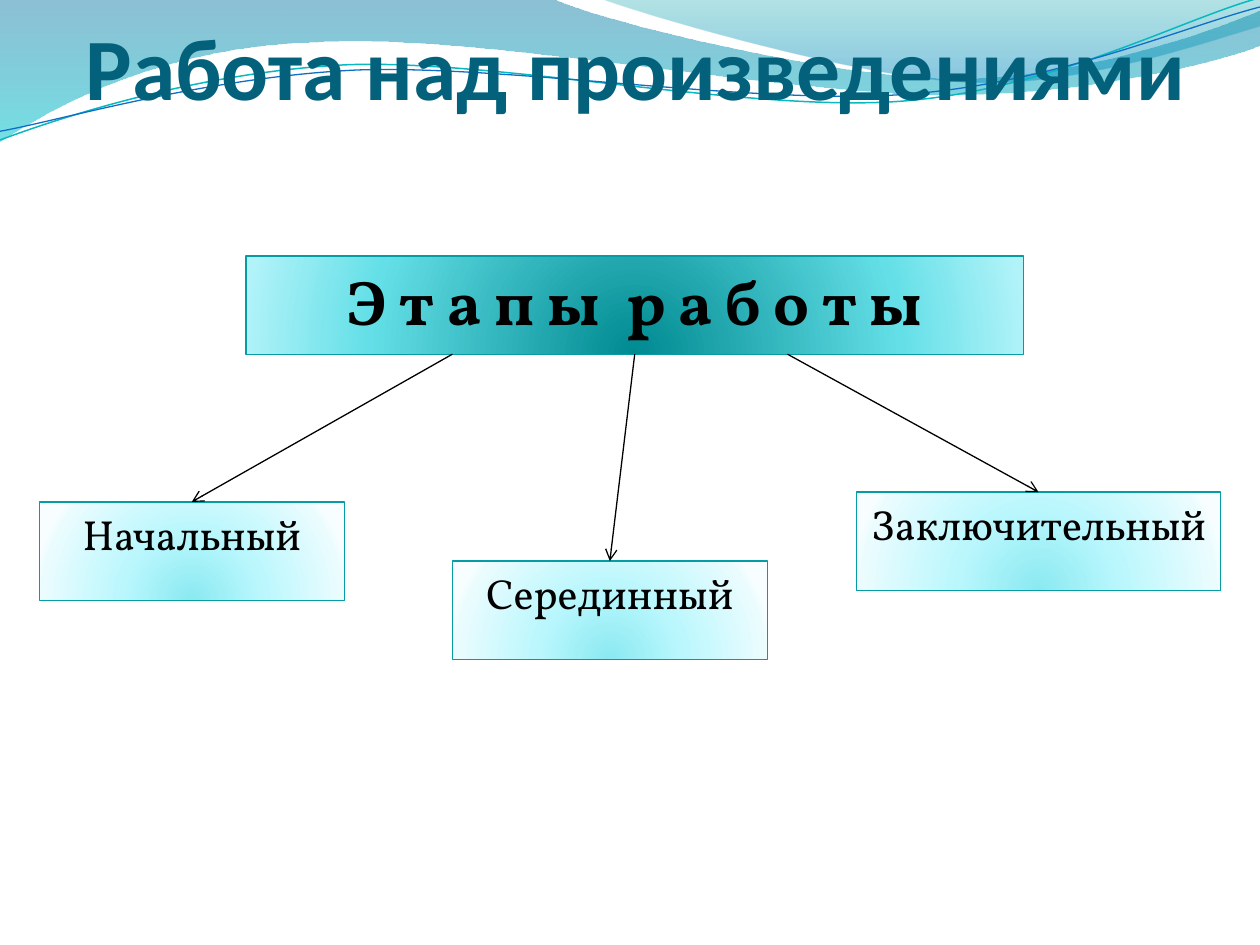
from lxml.etree import SubElement
from pptx import Presentation
from pptx.dml.color import RGBColor
from pptx.enum.shapes import MSO_CONNECTOR, MSO_SHAPE
from pptx.enum.text import MSO_ANCHOR, MSO_AUTO_SIZE, PP_ALIGN
from pptx.oxml import parse_xml
from pptx.oxml.ns import nsdecls, qn
from pptx.util import Pt

# Content: lengths in points, gradient stops as (position %, colour, opacity %)
TITLE = "Работа над произведениями"
HEADING = ("Э т а п ы", "р а б о т ы")
HEADING_BOX = (140.6, 146.2, 444.2)
BOX_HEIGHT = 56.2
STAGES = [  # text, (left, top, width), x where its arrow leaves the heading
    ("Начальный", (22.5, 286.8, 174.2), 258.5),
    ("Серединный", (258.5, 320.6, 180), 362.7),
    ("Заключительный", (489.4, 281.2, 208.1), 450),
]
HEADING_STOPS = [(0, "008A91", 100), (68, "64DFE7", 100), (100, "B1F3F9", 100)]
STAGE_STOPS = [(0, "8BE9F1", 100), (43, "B9F7FD", 100),
               (93, "EAFCFE", 100), (100, "F8FEFF", 100)]
RADIAL = ('<a:path path="circle"><a:fillToRect l="50000" t="130000" '
          'r="50000" b="-30000"/></a:path>')
DOWNWARD = '<a:lin ang="5400000" scaled="0"/>'

# Waves: a start point, then line ends (x, y) or Bezier curves (x1, y1, x2, y2, x, y)
FILLED_WAVES = [
    ([(0, 0), (317, 0), (343, 12, 478, 45, 546, 45), (614, 45, 690, 19, 720, 6),
      (720, 26), (708, 32, 626, 55, 537, 54), (448, 54, 275, 20, 185, 24),
      (93, 26, 33, 60, 0, 81)],
     [(0, "0074A1", 45), (100, "00C6CF", 55)]),
    ([(345, 0), (366, 8, 491, 45, 554, 47), (616, 50, 692, 23, 720, 15), (720, 0)],
     [(0, "00A1A9", 30), (80, "008BBF", 45)]),
]
LINE_WAVES = [
    ([(0, 80), (35, 67, 114, 41, 199, 37), (284, 34, 427, 64, 513, 58),
      (600, 52, 675, 11, 719, -1)], "0AB8BF", 0.85),
    ([(0, 75), (34, 69, 118, 44, 204, 40), (290, 37, 430, 60, 516, 54),
      (602, 48, 677, 15, 720, 4)], "0F6FC6", 0.75),
]


def color(hex_code):
    return RGBColor.from_string(hex_code)


def fill_gradient(shape, stops, direction):
    shape.fill.solid()
    solid = shape.element.spPr.find(qn("a:solidFill"))
    marks = "".join(
        f'<a:gs pos="{pos * 1000}"><a:srgbClr val="{tint}">'
        f'<a:alpha val="{opacity * 1000}"/></a:srgbClr></a:gs>'
        for pos, tint, opacity in stops)
    gradient = parse_xml(f'<a:gradFill {nsdecls("a")} rotWithShape="1">'
                         f'<a:gsLst>{marks}</a:gsLst>{direction}</a:gradFill>')
    solid.getparent().replace(solid, gradient)


def set_line(shape, tint, width):
    shape.line.color.rgb = color(tint)
    shape.line.width = Pt(width)


def add_wave(outline, closed):
    points = [(Pt(x), Pt(y)) for segment in outline
              for x, y in zip(segment[::2], segment[1::2])]
    builder = slide.shapes.build_freeform(*points[0])
    builder.add_line_segments(points[1:], close=closed)
    wave = builder.convert_to_shape()
    wave.shadow.inherit = False
    # Merge the three points of each curve into one Bezier segment
    steps = iter(list(wave.element.iter(qn("a:lnTo"))))
    for segment in outline[1:]:
        first = next(steps)
        if len(segment) == 6:
            first.tag = qn("a:cubicBezTo")
            for _ in range(2):
                step = next(steps)
                first.append(step[0])
                step.getparent().remove(step)
    return wave


def place(shape, left, top, width, height):
    shape.left, shape.top = Pt(left), Pt(top)
    shape.width, shape.height = Pt(width), Pt(height)


def format_text(shape, size, font_name, tint, bold, anchor):
    frame = shape.text_frame
    frame.word_wrap = True
    frame.auto_size = MSO_AUTO_SIZE.NONE
    frame.vertical_anchor = anchor
    paragraph = frame.paragraphs[0]
    paragraph.alignment = PP_ALIGN.CENTER
    paragraph.space_before = Pt(0)
    font = paragraph.font
    font.size, font.name, font.bold = Pt(size), font_name, bold
    font.color.rgb = color(tint)


def style_box(shape, box, stops, size, bold):
    place(shape, *box, BOX_HEIGHT)
    fill_gradient(shape, stops, RADIAL)
    set_line(shape, "069CA3", 0.75)
    format_text(shape, size, "Vollkorn", "000000", bold, MSO_ANCHOR.TOP)


def add_rectangle():
    rectangle = slide.shapes.add_shape(MSO_SHAPE.RECTANGLE, 0, 0, 0, 0)
    rectangle.shadow.inherit = False
    return rectangle


prs = Presentation()
prs.slide_width, prs.slide_height = Pt(720), Pt(540)
slide = prs.slides.add_slide(prs.slide_layouts[1])
title, body = slide.placeholders

# Waves, sent behind the placeholders
waves = []
for outline, stops in FILLED_WAVES:
    wave = add_wave(outline, closed=True)
    fill_gradient(wave, stops, DOWNWARD)
    wave.line.fill.background()
    waves.append(wave)
for outline, tint, width in LINE_WAVES:
    wave = add_wave(outline, closed=False)
    wave.fill.background()
    set_line(wave, tint, width)
    waves.append(wave)
for wave in waves:
    title.element.addprevious(wave.element)

# Title
title.text = TITLE
place(title, 28.3, 0, 670.4, 67.7)
format_text(title, 50, "Calibri", "04617B", True, MSO_ANCHOR.BOTTOM)
frame = title.text_frame
frame.margin_left = frame.margin_right = frame.margin_bottom = 0
frame.margin_top = Pt(3.6)

# Heading box, with a wider gap between its two words
heading = add_rectangle()
words = heading.text_frame.paragraphs[0]
for part in (HEADING[0], " ", HEADING[1]):
    words.add_run().text = part
words.runs[1].font._element.set("spc", "800")
style_box(heading, HEADING_BOX, HEADING_STOPS, 36, True)

# Stage boxes: the first one is the body placeholder
for index, (stage, box, _) in enumerate(STAGES):
    stage_box = add_rectangle() if index else body
    stage_box.text_frame.text = stage
    properties = stage_box.text_frame.paragraphs[0]._p.get_or_add_pPr()
    properties.set("marL", "0")
    properties.set("indent", "0")
    SubElement(properties, qn("a:buNone"))
    style_box(stage_box, box, STAGE_STOPS, 24, False)

# Arrows from the heading to the top centre of each stage
for _, (left, top, width), start in STAGES:
    arrow = slide.shapes.add_connector(
        MSO_CONNECTOR.STRAIGHT, Pt(start), Pt(HEADING_BOX[1] + BOX_HEIGHT),
        Pt(left + width / 2), Pt(top))
    set_line(arrow, "000000", 0.75)
    SubElement(arrow.line._get_or_add_ln(), qn("a:tailEnd"), type="arrow")
    SubElement(arrow._element.spPr, qn("a:effectLst"))

prs.save("out.pptx")
